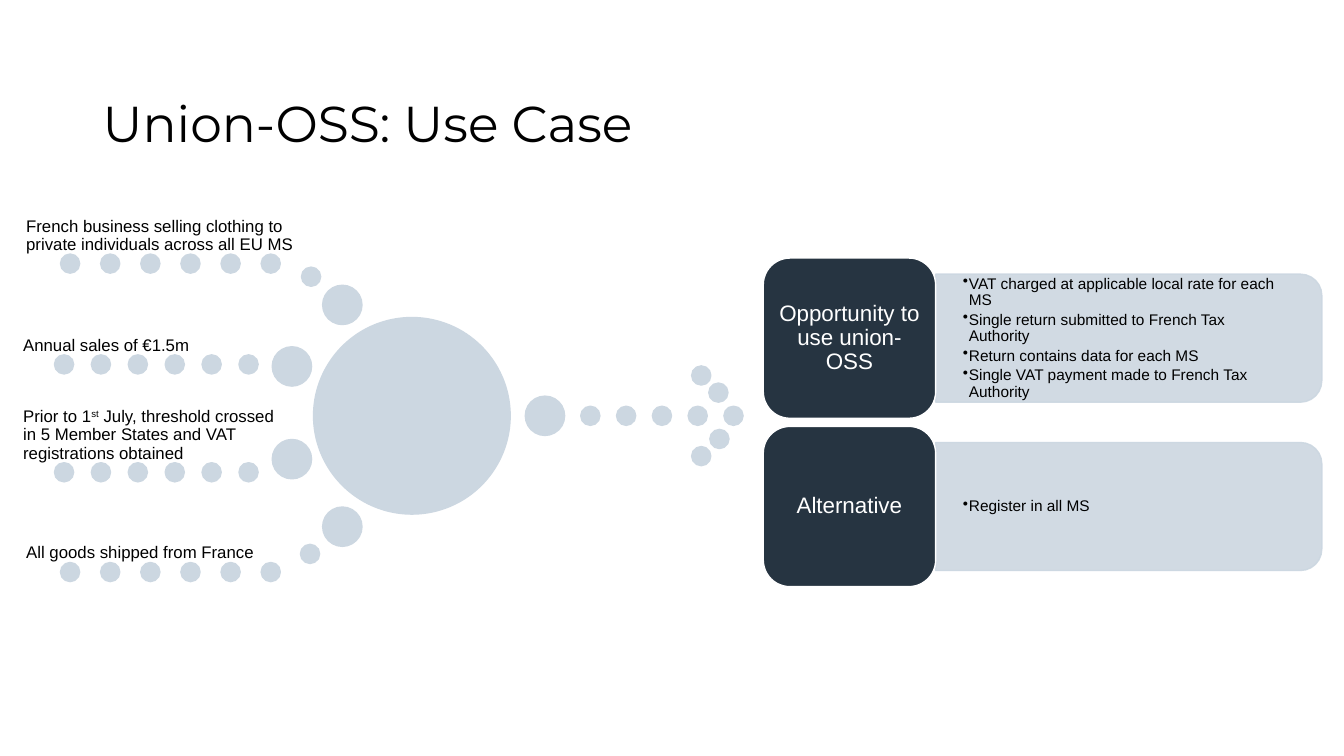
"""Build the Union-OSS use case slide: four facts converging on two options."""
import pptx
import pptx.dml.color
import pptx.enum.shapes
import pptx.enum.text
import pptx.oxml
import pptx.oxml.ns
import pptx.util
from pptx.util import Inches

THEME = {
    "pale": "CCD7E1", "dark": "263441", "ink": "000000", "white": "FFFFFF",
    "heading": "Montserrat", "body": "Arial",
    "title_size": 36, "card_size": 16, "fact_size": 12, "point_size": 11,
}
TITLE = "Union-OSS: Use Case"
FACTS = [
    {"runs": ["French business selling clothing to private individuals across all EU MS"],
     "left": 0.26, "width": 2.84, "dots": (0.6, 2.59), "top": 2.52},
    {"runs": ["Annual sales of €1.5m"],
     "left": 0.23, "width": 2.64, "dots": (0.54, 2.37), "top": 3.52},
    {"runs": ["Prior to 1", ("st",), " July, threshold crossed in 5 Member States "
              "and VAT registrations obtained"],
     "left": 0.23, "width": 2.64, "dots": (0.54, 2.37), "top": 4.59},
    {"runs": ["All goods shipped from France"],
     "left": 0.26, "width": 2.84, "dots": (0.6, 2.59), "top": 5.58},
]
OPTIONS = [
    ("Opportunity to use union-OSS", [
        "VAT charged at applicable local rate for each MS",
        "Single return submitted to French Tax Authority",
        "Return contains data for each MS",
        "Single VAT payment made to French Tax Authority\u00a0"]),
    ("Alternative", ["Register in all MS\u00a0"]),
]
DOT, JOINT, HUB = 0.19, 0.39, 1.95
HUB_PLACE = (3.11, 3.15)
JOINTS = [(3.2, 2.83), (2.7, 3.44), (2.7, 4.36), (3.2, 5.03), (5.21, 3.93)]
BENDS = [(2.99, 2.65), (2.98, 5.4)]
ARROW_TIP = [(6.86, 3.63), (7.03, 3.8), (7.04, 4.26), (6.86, 4.43)]
ARROW_SHAFT = (5.76, 7.18, 4.03)
FACT_HEIGHT, DOTS_PER_FACT, DOTS_PER_SHAFT = 0.48, 6, 5
CARD_LEFT, CARD_TOP, CARD_WIDTH, CARD_HEIGHT, CARD_STEP = 7.57, 2.56, 1.71, 1.59, 1.67
PANEL_WIDTH, PANEL_HEIGHT = 3.83, 1.27
POINTS_WIDTH, POINTS_HEIGHT = 3.77, 1.15

SHAPES = pptx.enum.shapes.MSO_SHAPE
ANCHORS = pptx.enum.text.MSO_ANCHOR
ALIGNS = pptx.enum.text.PP_ALIGN


def color(name):
    return pptx.dml.color.RGBColor.from_string(THEME[name])


def add_figure(page, kind, left, top, width, height, fill="pale", line="pale"):
    figure = page.shapes.add_shape(kind, *map(Inches, (left, top, width, height)))
    figure.shadow.inherit = False
    figure.fill.solid()
    figure.fill.fore_color.rgb = color(fill)
    figure.line.color.rgb = color(line)
    figure.line.width = pptx.util.Pt(1)
    return figure


def add_circle(page, left, top, size=DOT):
    add_figure(page, SHAPES.OVAL, left, top, size, size)


def add_row(page, first, last, top, count):
    for index in range(count):
        add_circle(page, first + index * (last - first) / (count - 1), top)


def add_box(page, left, top, width, height):
    return page.shapes.add_textbox(*map(Inches, (left, top, width, height)))


def add_bullet(para):
    para.level = 1
    settings = para._p.get_or_add_pPr()
    settings.set("marL", str(Inches(0.06)))
    settings.set("indent", str(-Inches(0.06)))
    settings.append(pptx.oxml.parse_xml(
        f'<a:buChar {pptx.oxml.ns.nsdecls("a")} char="•"/>'))


def write(box, paragraphs, size, font="body", ink="ink", anchor=ANCHORS.MIDDLE,
          align=ALIGNS.LEFT, insets=(0, 0), bullets=False, gap=0):
    """Fill a box; each paragraph is a list of runs, a tuple being superscript."""
    frame = box.text_frame
    frame.word_wrap = True
    frame.vertical_anchor = anchor
    frame.margin_left = frame.margin_right = Inches(insets[0])
    frame.margin_top = frame.margin_bottom = Inches(insets[1])
    for index, runs in enumerate(paragraphs):
        para = frame.add_paragraph() if index else frame.paragraphs[0]
        para.alignment = align
        para.line_spacing = 0.9
        para.space_before = pptx.util.Pt(0)
        para.space_after = pptx.util.Pt(gap if index < len(paragraphs) - 1 else 0)
        if bullets:
            add_bullet(para)
        for text in runs:
            raised = isinstance(text, tuple)
            span = para.add_run()
            span.text = text[0] if raised else text
            span.font.size = pptx.util.Pt(THEME[size])
            span.font.name = THEME[font]
            span.font.color.rgb = color(ink)
            if raised:
                span._r.get_or_add_rPr().set("baseline", "30000")


def add_panel(page, left, middle):
    center = left + PANEL_WIDTH / 2
    panel = add_figure(page, SHAPES.ROUND_2_SAME_RECTANGLE, center - PANEL_HEIGHT / 2,
                       middle - PANEL_WIDTH / 2, PANEL_HEIGHT, PANEL_WIDTH)
    panel.rotation = 90
    for tint in panel._element.spPr.iter(pptx.oxml.ns.qn("a:srgbClr")):
        tint.append(pptx.oxml.parse_xml(
            f'<a:alpha {pptx.oxml.ns.nsdecls("a")} val="90000"/>'))


def add_facts(page):
    for fact in FACTS:
        add_row(page, *fact["dots"], fact["top"], DOTS_PER_FACT)
        box = add_box(page, fact["left"], fact["top"] - FACT_HEIGHT,
                      fact["width"], FACT_HEIGHT)
        write(box, [fact["runs"]], "fact_size", anchor=ANCHORS.BOTTOM)
    add_circle(page, *HUB_PLACE, HUB)
    for place in JOINTS:
        add_circle(page, *place, JOINT)
    for place in BENDS + ARROW_TIP:
        add_circle(page, *place)
    add_row(page, *ARROW_SHAFT, DOTS_PER_SHAFT)


def add_options(page):
    edge = CARD_LEFT + CARD_WIDTH
    for index, (name, points) in enumerate(OPTIONS):
        top = CARD_TOP + index * CARD_STEP
        middle = top + CARD_HEIGHT / 2
        add_panel(page, edge, middle)
        box = add_box(page, edge, middle - POINTS_HEIGHT / 2, POINTS_WIDTH, POINTS_HEIGHT)
        write(box, [[point] for point in points], "point_size",
              insets=(0.27, 0.14), bullets=True, gap=2)
        card = add_figure(page, SHAPES.ROUNDED_RECTANGLE, CARD_LEFT, top,
                          CARD_WIDTH, CARD_HEIGHT, fill="dark", line="white")
        write(card, [[name]], "card_size", ink="white", align=ALIGNS.CENTER,
              insets=(0.07, 0.03))


def main():
    deck = pptx.Presentation()
    deck.slide_width, deck.slide_height = Inches(13.33), Inches(7.5)
    page = deck.slides.add_slide(deck.slide_layouts[6])
    write(add_box(page, 0.92, 0.91, 11.58, 0.66), [[TITLE]], "title_size",
          font="heading", anchor=ANCHORS.BOTTOM, insets=(0.1, 0.05))
    add_facts(page)
    add_options(page)
    deck.save("out.pptx")


if __name__ == "__main__":
    main()
